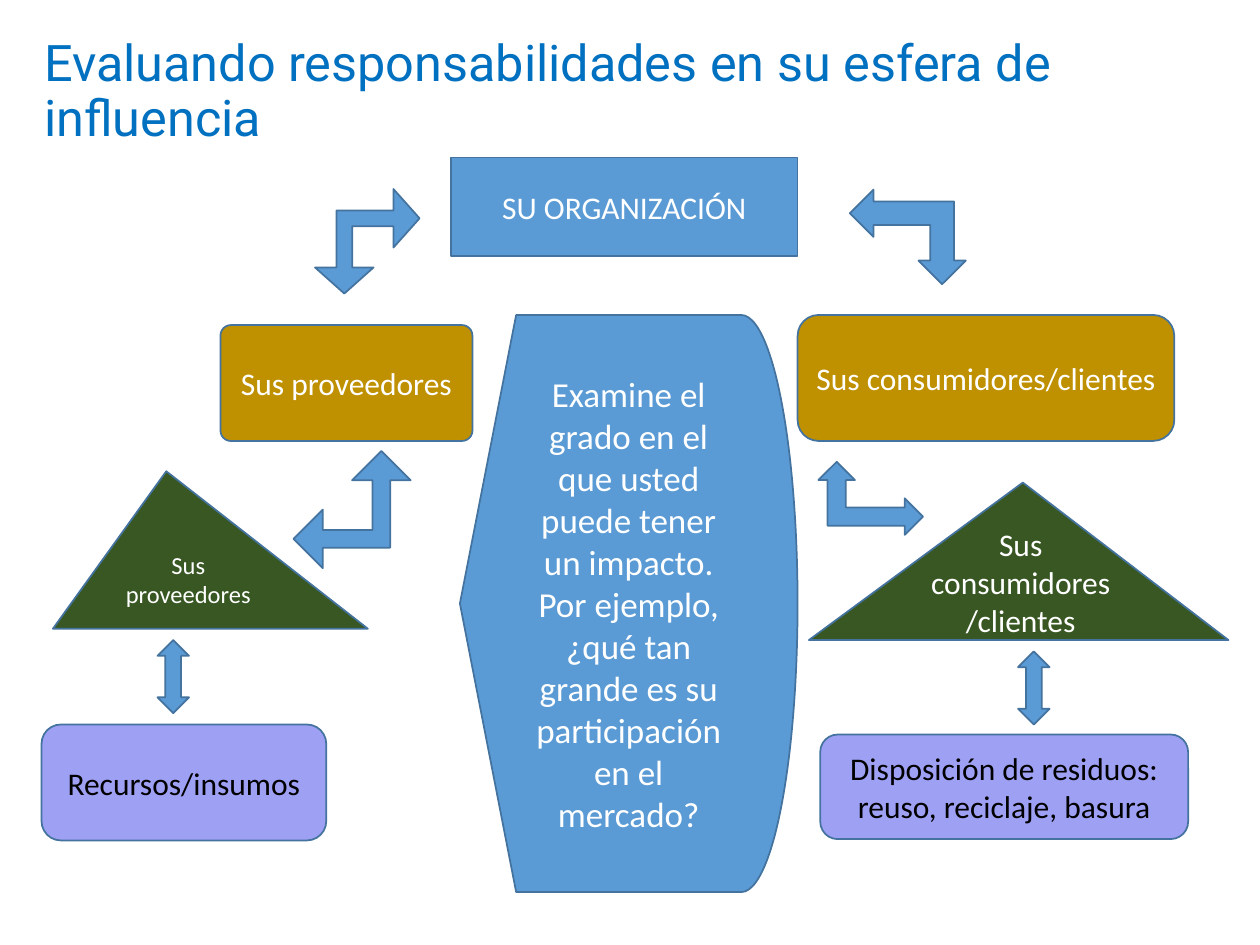
import dataclasses

import pptx
import pptx.dml.color
import pptx.enum.shapes
import pptx.enum.text
import pptx.util

Inches = pptx.util.Inches
Pt = pptx.util.Pt
RGB = pptx.dml.color.RGBColor.from_string
SHAPE = pptx.enum.shapes.MSO_SHAPE
ANCHOR = pptx.enum.text.MSO_ANCHOR
ALIGN = pptx.enum.text.PP_ALIGN


@dataclasses.dataclass(frozen=True)
class Theme:
    title_font: str = "Roboto"
    body_font: str = "Calibri"
    title_color: str = "0070C0"
    blue: str = "5B9BD5"
    outline: str = "43739E"
    gold: str = "BF9000"
    green: str = "385723"
    lilac: str = "9EA0F4"
    light: str = "FFFFFF"
    dark: str = "000000"
    title_size: float = 28.8
    large: int = 20
    body: int = 18
    small: int = 14
    line: int = 1


THEME = Theme()


def add_shape(s, kind, box, fill, adj=(), rotation=0):
    """Place a filled, outlined preset shape; box is in inches."""
    sp = s.shapes.add_shape(kind, *(Inches(v) for v in box))
    sp.shadow.inherit = False
    sp.fill.solid()
    sp.fill.fore_color.rgb = RGB(fill)
    sp.line.color.rgb = RGB(THEME.outline)
    sp.line.width = Pt(THEME.line)
    sp.rotation = rotation
    for i, value in enumerate(adj):
        sp.adjustments[i] = value
    return sp


def add_label(sp, text, color=THEME.light, size=THEME.body,
              anchor=ANCHOR.MIDDLE, top=0.05, bottom=0.05):
    """Write centred text inside a shape."""
    tf = sp.text_frame
    tf.word_wrap = True
    tf.vertical_anchor = anchor
    tf.margin_top, tf.margin_bottom = Inches(top), Inches(bottom)
    tf.text = text
    p = tf.paragraphs[0]
    p.alignment = ALIGN.CENTER
    font = p.runs[0].font
    font.name, font.size = THEME.body_font, Pt(size)
    font.color.rgb = RGB(color)


def build_title(s, box):
    title = s.shapes.title
    title.left, title.top, title.width, title.height = (Inches(v) for v in box)
    tf = title.text_frame
    tf.word_wrap = True
    tf.auto_size = pptx.enum.text.MSO_AUTO_SIZE.NONE
    tf.vertical_anchor = ANCHOR.MIDDLE
    tf.text = "Evaluando responsabilidades en su esfera de influencia"
    p = tf.paragraphs[0]
    p.alignment = ALIGN.LEFT
    p.line_spacing = 0.9
    font = p.runs[0].font
    font.name, font.size = THEME.title_font, Pt(THEME.title_size)
    font.color.rgb = RGB(THEME.title_color)


def build_center(s, x, y, w, h):
    # Organization on top, question panel below
    org = add_shape(s, SHAPE.RECTANGLE, (x - 0.07, y, 2.75, 0.78), THEME.blue)
    add_label(org, "SU ORGANIZACIÓN")
    panel = add_shape(s, SHAPE.FLOWCHART_DISPLAY,
                      (x, y + 1.25, w, h - 1.25), THEME.blue)
    add_label(panel, "Examine el grado en el que usted puede tener un impacto. "
              "Por ejemplo, ¿qué tan grande es su participación en el mercado?",
              size=THEME.large)


def build_suppliers(s, x, y):
    # Direct suppliers, their suppliers, resources
    direct = add_shape(s, SHAPE.ROUNDED_RECTANGLE,
                       (x + 1.42, y + 1.08, 2, 0.92), THEME.gold, [0.09])
    add_label(direct, "Sus proveedores")
    second = add_shape(s, SHAPE.ISOSCELES_TRIANGLE,
                       (x + 0.09, y + 2.24, 2.5, 1.25), THEME.green, [0.36])
    add_label(second, "Sus proveedores", size=THEME.small,
              anchor=ANCHOR.TOP, top=0)
    source = add_shape(s, SHAPE.FLOWCHART_ALTERNATE_PROCESS,
                       (x, y + 4.25, 2.26, 0.92), THEME.lilac)
    add_label(source, "Recursos/insumos", THEME.dark)

    # Links between the levels
    add_shape(s, SHAPE.LEFT_UP_ARROW, (x + 2.17, y, 0.83, 0.83),
              THEME.blue, [0.15, 0.28, 0.25], 180)
    add_shape(s, SHAPE.LEFT_UP_ARROW, (x + 2, y + 2.08, 0.93, 0.93),
              THEME.blue, [0.15, 0.25, 0.25])
    add_shape(s, SHAPE.UP_DOWN_ARROW, (x + 0.92, y + 3.58, 0.25, 0.58),
              THEME.blue)


def build_customers(s, x, y):
    # Direct customers, their customers, waste
    direct = add_shape(s, SHAPE.ROUNDED_RECTANGLE,
                       (x, y + 1, 2.99, 1), THEME.gold)
    add_label(direct, "Sus consumidores/clientes")
    second = add_shape(s, SHAPE.ISOSCELES_TRIANGLE,
                       (x + 0.09, y + 2.33, 3.33, 1.25), THEME.green, [0.51])
    add_label(second, "Sus consumidores/clientes", bottom=0.35)
    waste = add_shape(s, SHAPE.ROUNDED_RECTANGLE,
                      (x + 0.18, y + 4.33, 2.92, 0.83), THEME.lilac)
    add_label(waste, "Disposición de residuos: reuso, reciclaje, basura",
              THEME.dark)

    # Links between the levels
    add_shape(s, SHAPE.LEFT_UP_ARROW, (x + 0.5, y - 0.08, 0.75, 0.92),
              THEME.blue, rotation=270)
    add_shape(s, SHAPE.LEFT_UP_ARROW, (x + 0.29, y + 2.04, 0.58, 0.83),
              THEME.blue, rotation=90)
    add_shape(s, SHAPE.UP_DOWN_ARROW, (x + 1.75, y + 3.67, 0.25, 0.58),
              THEME.blue)


def main():
    prs = pptx.Presentation()
    prs.slide_width, prs.slide_height = Inches(10), Inches(7.5)
    s = prs.slides.add_slide(prs.slide_layouts[5])
    build_title(s, (0.25, 0.3, 9.75, 0.87))
    build_suppliers(s, 0.33, 1.5)
    build_customers(s, 6.33, 1.5)
    build_center(s, 3.65, 1.25, 2.68, 5.83)
    prs.save("out.pptx")


if __name__ == "__main__":
    main()
